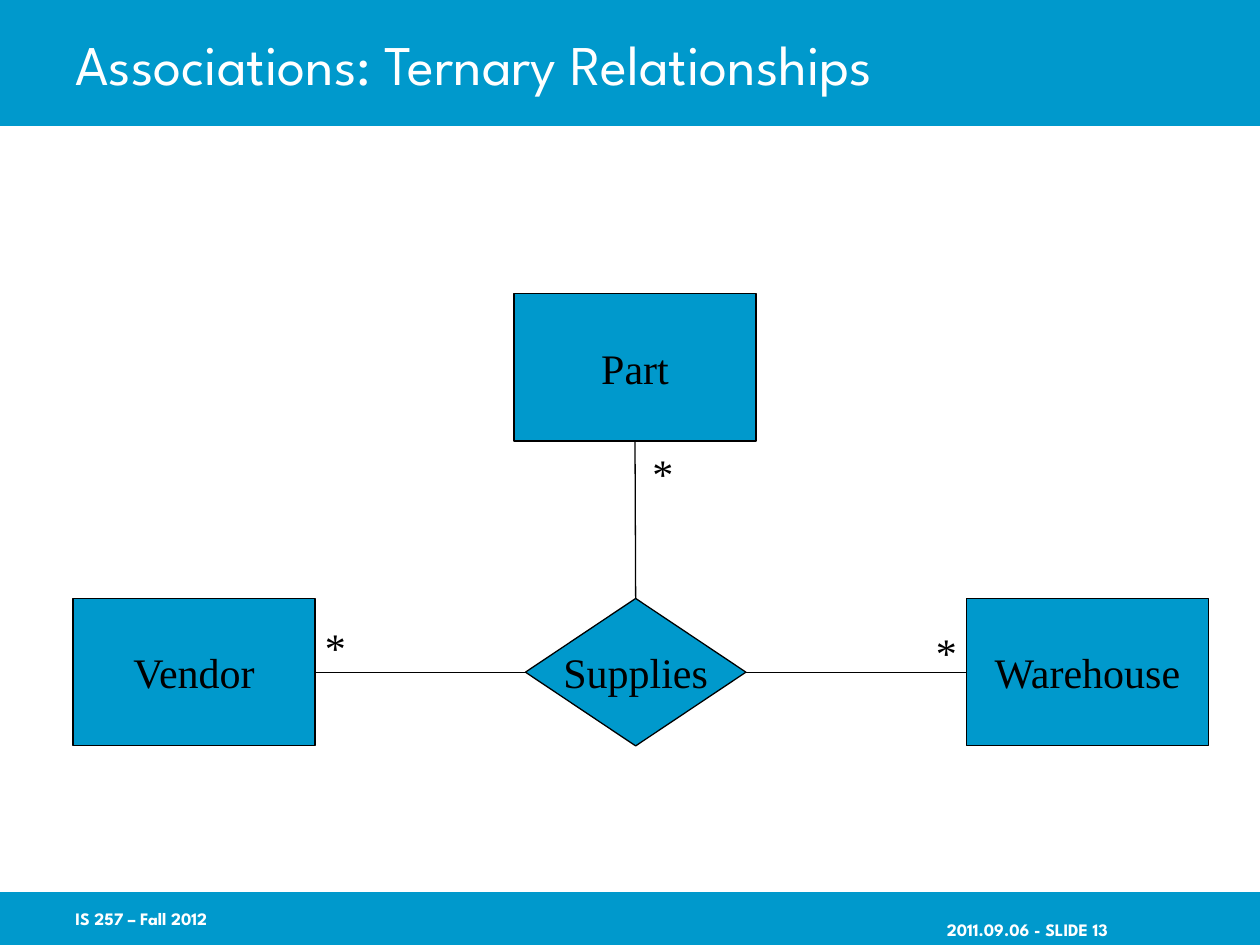
"""Build the slide on ternary relationships between Part, Vendor and Warehouse."""
from dataclasses import dataclass

import pptx
import pptx.dml.color
import pptx.enum.shapes
import pptx.enum.text
import pptx.util
from lxml import etree

Inches = pptx.util.Inches
Kind = pptx.enum.shapes.MSO_SHAPE
Align = pptx.enum.text.PP_ALIGN
Anchor = pptx.enum.text.MSO_ANCHOR

COLORS = {"blue": "0099CC", "ink": "000000", "white": "FFFFFF"}
SANS, SERIF = "League Spartan", "Times New Roman"
DRAW = "http://schemas.openxmlformats.org/drawingml/2006/main"
TALL = 1.17
TOP, LEFT, BOTTOM, RIGHT = range(4)


@dataclass
class Node:
    name: str
    left: float
    top: float
    wide: float = 1.92
    kind: Kind = Kind.RECTANGLE


@dataclass
class Link:
    start: str
    side: int
    end: str
    point: int


@dataclass
class Label:
    text: str
    left: float
    top: float
    wide: float
    tall: float


NODES = [
    Node("Vendor", 0.58, 4.75),
    Node("Warehouse", 7.67, 4.75),
    Node("Supplies", 4.17, 4.75, 1.75, Kind.DIAMOND),
    Node("Part", 4.08, 2.33),
]
LINKS = [
    Link("Vendor", RIGHT, "Supplies", LEFT),
    Link("Warehouse", LEFT, "Supplies", RIGHT),
    Link("Part", BOTTOM, "Supplies", TOP),
]
STARS = [Label("*", left, top, 0.37, 0.5)
         for left, top in ((2.48, 4.88), (7.33, 4.92), (5.08, 3.5))]
COURSE = Label("IS 257 – Fall 2012", 0.5, 7.08, 2.08, 0.42)
PAGE = Label("2011.09.06 - SLIDE 13", 7.3, 7.26, 1.49, 0.24)


def paint(name: str) -> pptx.dml.color.RGBColor:
    """Return the named colour."""
    return pptx.dml.color.RGBColor.from_string(COLORS[name])


def write(shape, text: str, face: str, size: int, color: str,
          align=Align.LEFT, bold: bool = False) -> None:
    """Set and format the text of a shape."""
    shape.text_frame.text = text
    par = shape.text_frame.paragraphs[0]
    par.alignment = align
    font = par.runs[0].font
    font.name, font.size, font.bold = face, pptx.util.Pt(size), bold
    font.color.rgb = paint(color)


def add_band(slide, top: float, tall: float) -> None:
    """Draw a blue band across the slide."""
    band = slide.shapes.add_shape(
        Kind.RECTANGLE, 0, Inches(top), Inches(10), Inches(tall))
    band.shadow.inherit = False
    band.fill.solid()
    band.fill.fore_color.rgb = paint("blue")
    band.line.fill.background()


def add_label(slide, label: Label):
    """Add an empty text box at the place of a label."""
    box = slide.shapes.add_textbox(
        Inches(label.left), Inches(label.top),
        Inches(label.wide), Inches(label.tall))
    box.text_frame.word_wrap = False
    return box


def add_foot(slide, label: Label, align) -> None:
    """Write a line of the footer."""
    box = add_label(slide, label)
    frame = box.text_frame
    frame.word_wrap = True
    frame.vertical_anchor = Anchor.MIDDLE
    frame.margin_right = 0
    write(box, label.text, SANS, 10, "white", align, True)


def add_node(slide, node: Node):
    """Draw an entity or relationship and return its shape."""
    shape = slide.shapes.add_shape(
        node.kind, Inches(node.left), Inches(node.top),
        Inches(node.wide), Inches(TALL))
    shape.shadow.inherit = False
    shape.fill.solid()
    shape.fill.fore_color.rgb = paint("blue")
    shape.line.color.rgb = paint("ink")
    shape.line.width = pptx.util.Pt(0.75)
    shape.text_frame.word_wrap = False
    shape.text_frame.vertical_anchor = Anchor.MIDDLE
    write(shape, node.name, SERIF, 24, "ink", Align.CENTER)
    return shape


def add_link(slide, link: Link, shapes: dict) -> None:
    """Join two nodes with a straight line."""
    line = slide.shapes.add_connector(
        pptx.enum.shapes.MSO_CONNECTOR.STRAIGHT, 0, 0, 0, 0)
    line.begin_connect(shapes[link.start], link.side)
    line.end_connect(shapes[link.end], link.point)
    line.line.color.rgb = paint("ink")
    line.line.width = pptx.util.Pt(0.75)
    etree.SubElement(line.element.spPr, f"{{{DRAW}}}effectLst")


def add_title(slide, text: str) -> None:
    """Place the title in front of the top band."""
    title = slide.shapes.title
    title.left, title.top = Inches(0.5), 0
    title.width, title.height = Inches(8.5), Inches(1)
    title.text_frame.vertical_anchor = Anchor.MIDDLE
    write(title, text, SANS, 32, "white")
    title.element.getparent().append(title.element)


def main() -> None:
    """Build and save the slide."""
    deck = pptx.Presentation()
    deck.slide_width, deck.slide_height = Inches(10), Inches(7.5)
    slide = deck.slides.add_slide(deck.slide_layouts[5])
    add_band(slide, 0, 1)
    add_band(slide, 7.08, 0.42)
    add_foot(slide, PAGE, Align.RIGHT)
    add_foot(slide, COURSE, Align.LEFT)
    add_title(slide, "Associations: Ternary Relationships")
    shapes = {node.name: add_node(slide, node) for node in NODES}
    for star in STARS:
        write(add_label(slide, star), star.text, SERIF, 24, "ink")
    for link in LINKS:
        add_link(slide, link, shapes)
    deck.save("out.pptx")


if __name__ == "__main__":
    main()
